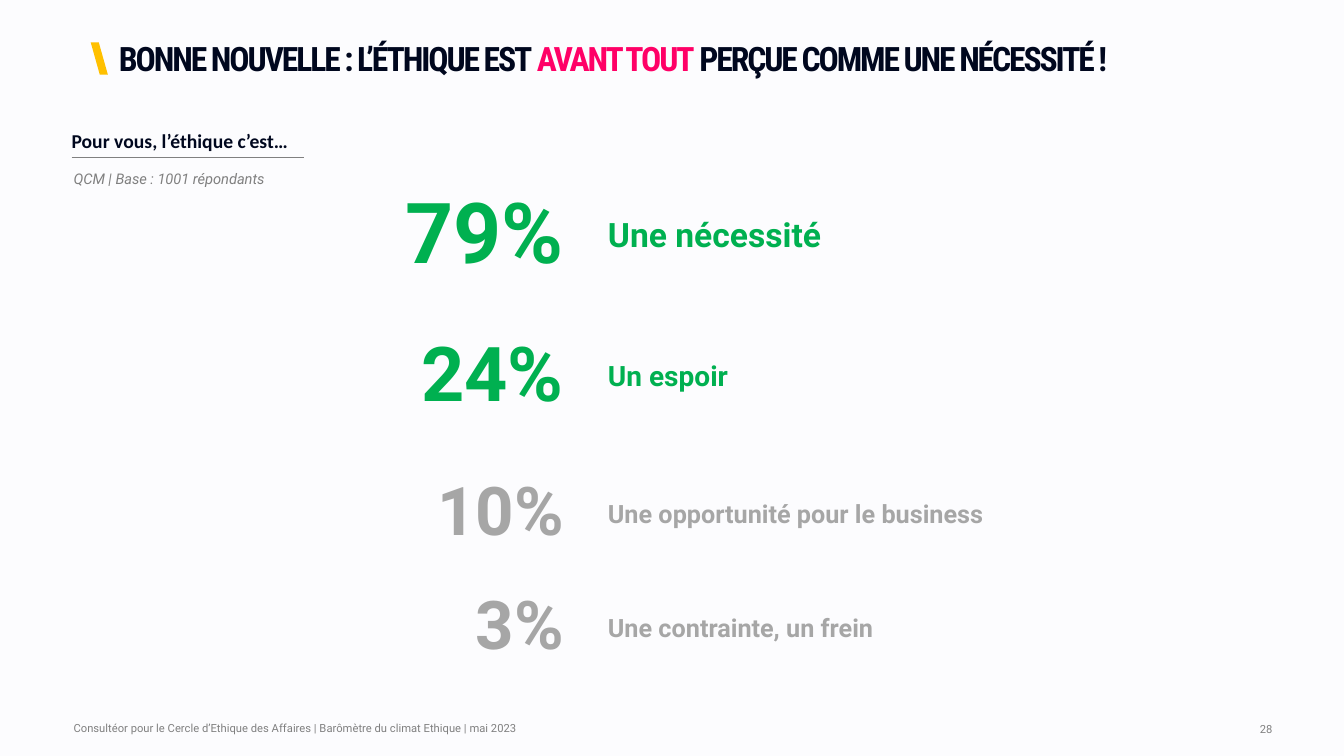
from dataclasses import dataclass

from lxml import etree
from pptx import Presentation
from pptx.dml.color import RGBColor
from pptx.enum.text import MSO_ANCHOR, PP_ALIGN
from pptx.oxml.ns import qn
from pptx.slide import Slide
from pptx.util import Inches, Pt

LEFT, RIGHT = PP_ALIGN.LEFT, PP_ALIGN.RIGHT
TOP, MIDDLE, BOTTOM = MSO_ANCHOR.TOP, MSO_ANCHOR.MIDDLE, MSO_ANCHOR.BOTTOM


@dataclass(frozen=True)
class Theme:
    background: str = "FCFCFE"
    ink: str = "00071E"
    accent: str = "FF0066"
    marker: str = "FFC000"
    muted: str = "808080"
    strong: str = "00B050"
    weak: str = "A6A6A6"
    body_font: str = "Roboto"
    title_font: str = "Roboto Condensed"
    question_font: str = "Calibri"
    title_size: float = 24
    question_size: float = 14
    base_size: float = 10.5
    footer_size: float = 8


THEME = Theme()


@dataclass(frozen=True)
class Answer:
    percent: str
    label: str
    center: float
    percent_size: float
    label_size: float
    percent_width: float
    label_width: float
    color: str


ANSWERS = [
    Answer("79%", "Une nécessité", 2.28, 60, 24, 1.78, 3.2, THEME.strong),
    Answer("24%", "Un espoir", 3.68, 54, 20, 1.63, 3.69, THEME.strong),
    Answer("10%", "Une opportunité pour le business", 5.05, 48, 18, 1.63, 5.17, THEME.weak),
    Answer("3%", "Une contrainte, un frein", 6.18, 48, 18, 1.63, 5.17, THEME.weak),
]
PERCENT_RIGHT = 5.69
LABEL_LEFT = 6.03
LABEL_DROP = 0.04


def add_run(paragraph, text: str, *, size: float, color: str, font: str = THEME.body_font,
            bold: bool = False, italic: bool = False, spacing: float = 0) -> None:
    """Append a formatted run to a paragraph."""
    run = paragraph.add_run()
    run.text = text
    run.font.name = font
    run.font.size = Pt(size)
    run.font.bold = bold
    run.font.italic = italic
    run.font.color.rgb = RGBColor.from_string(color)
    if spacing:
        run.font._element.set("spc", str(round(spacing * 100)))


def add_text(slide: Slide, left: float, top: float, width: float, height: float,
             runs: list[tuple[str, str]], *, align=LEFT, anchor=TOP,
             insets: tuple[float, float, float, float] = (0, 0, 0, 0),
             line_spacing: float = 1.0, **run_format) -> None:
    """Add a text box whose runs are pairs of text and colour."""
    shape = slide.shapes.add_textbox(Inches(left), Inches(top), Inches(width), Inches(height))
    frame = shape.text_frame
    frame.word_wrap = True
    frame.vertical_anchor = anchor
    (frame.margin_left, frame.margin_top,
     frame.margin_right, frame.margin_bottom) = map(Inches, insets)
    paragraph = frame.paragraphs[0]
    paragraph.alignment = align
    paragraph.line_spacing = line_spacing
    for text, color in runs:
        add_run(paragraph, text, color=color, **run_format)


def add_title(slide: Slide) -> None:
    """Draw the headline and its slanted marker."""
    add_text(slide, 0.9, 0.42, 11.87, 0.36,
             [("BONNE NOUVELLE : L’ÉTHIQUE EST ", THEME.ink),
              ("AVANT TOUT ", THEME.accent),
              ("PERÇUE COMME UNE NÉCESSITÉ !", THEME.ink)],
             insets=(0.28, 0, 0, 0), line_spacing=0.9, size=THEME.title_size,
             font=THEME.title_font, bold=True, spacing=-1.5)
    builder = slide.shapes.build_freeform(Inches(0.9), Inches(0.42), scale=1.0)
    corners = [(0.98, 0.42), (1.07, 0.74), (0.99, 0.74)]
    builder.add_line_segments([(Inches(x), Inches(y)) for x, y in corners], close=True)
    marker = builder.convert_to_shape()
    marker.shadow.inherit = False
    marker.fill.solid()
    marker.fill.fore_color.rgb = RGBColor.from_string(THEME.marker)
    marker.line.fill.background()


def add_question(slide: Slide) -> None:
    """Draw the question as a one-cell table with a bottom rule."""
    table = slide.shapes.add_table(1, 1, Inches(0.71), Inches(1.25),
                                   Inches(2.31), Inches(0.31)).table
    table.first_row = False
    table.horz_banding = False
    cell = table.cell(0, 0)
    cell.margin_left, cell.margin_right = Inches(0), Inches(0.08)
    cell.margin_top = cell.margin_bottom = Inches(0.04)
    add_run(cell.text_frame.paragraphs[0], "Pour vous, l’éthique c’est…",
            size=THEME.question_size, color=THEME.ink, font=THEME.question_font, bold=True)
    properties = cell._tc.get_or_add_tcPr()
    for side in ("lnL", "lnR", "lnT"):
        etree.SubElement(etree.SubElement(properties, qn(f"a:{side}")), qn("a:noFill"))
    rule = etree.SubElement(properties, qn("a:lnB"), w=str(Pt(0.25)))
    rule_fill = etree.SubElement(rule, qn("a:solidFill"))
    etree.SubElement(rule_fill, qn("a:srgbClr"), val=THEME.muted)
    cell.fill.background()


def text_height(size: float) -> float:
    """Return the height in inches of a one-line box with standard margins."""
    return round(size * 1.2 / 72 + 0.1, 2)


def add_answer(slide: Slide, answer: Answer) -> None:
    """Draw a percentage and the label beside it."""
    height = text_height(answer.percent_size)
    add_text(slide, PERCENT_RIGHT - answer.percent_width, answer.center - height / 2,
             answer.percent_width, height, [(answer.percent, answer.color)],
             align=RIGHT, anchor=MIDDLE, insets=(0.1, 0.05, 0.1, 0.05),
             size=answer.percent_size, bold=True)
    height = text_height(answer.label_size)
    add_text(slide, LABEL_LEFT, answer.center + LABEL_DROP - height / 2,
             answer.label_width, height, [(answer.label, answer.color)],
             anchor=BOTTOM, insets=(0, 0.05, 0, 0.05), size=answer.label_size, bold=True)


def add_footer(slide: Slide) -> None:
    """Draw the source line and the page number."""
    source = "Consultéor pour le Cercle d’Ethique des Affaires | Barômètre du climat Ethique | mai 2023"
    add_text(slide, 0.73, 7.1, 9.96, 0.25, [(source, THEME.muted)],
             anchor=MIDDLE, size=THEME.footer_size)
    add_text(slide, 11.65, 7.11, 0.97, 0.25, [("28", THEME.muted)],
             align=RIGHT, anchor=MIDDLE, size=THEME.footer_size)


def main() -> None:
    """Build the slide and save it."""
    presentation = Presentation()
    presentation.slide_width, presentation.slide_height = Inches(13.33), Inches(7.5)
    slide = presentation.slides.add_slide(presentation.slide_layouts[6])
    slide.background.fill.solid()
    slide.background.fill.fore_color.rgb = RGBColor.from_string(THEME.background)
    add_title(slide)
    add_question(slide)
    add_text(slide, 0.73, 1.68, 5.52, 0.18, [("QCM | Base : 1001 répondants", THEME.muted)],
             size=THEME.base_size, italic=True)
    for answer in ANSWERS:
        add_answer(slide, answer)
    add_footer(slide)
    presentation.save("out.pptx")


if __name__ == "__main__":
    main()
